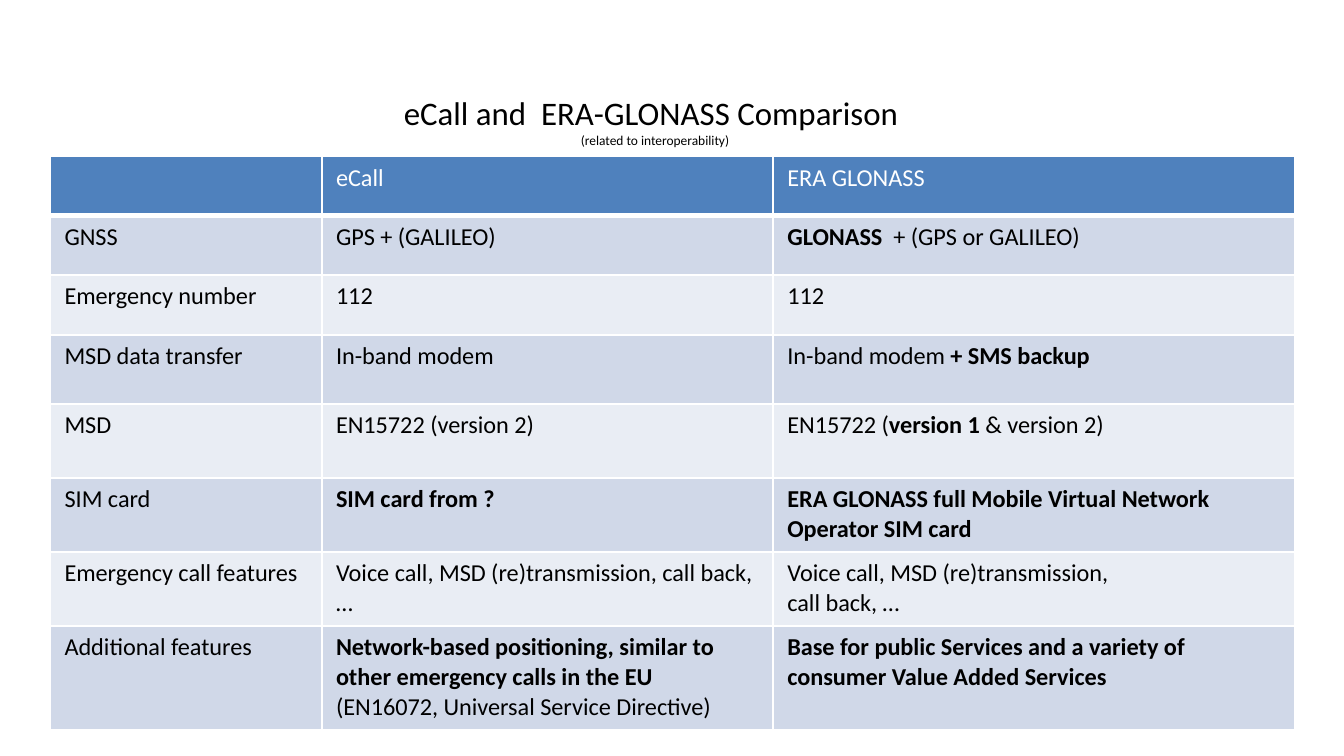
from lxml.etree import SubElement
from pptx import Presentation
from pptx.dml.color import RGBColor as RGB
from pptx.enum.text import MSO_ANCHOR as Anchor, PP_ALIGN as Align
from pptx.oxml.ns import qn
from pptx.util import Cm, Pt

FONT = "Calibri"
COLORS = {"text": "000000", "white": "FFFFFF", "header": "4F81BD",
          "odd": "D0D8E8", "even": "E9EDF4"}

TITLE = [("eCall and  ERA-GLONASS Comparison ", 17.6),
         ("(related to interoperability)", 7.2)]

# Text between ** marks is bold
ROWS = [
    ("", "eCall", "ERA GLONASS"),
    ("GNSS", "GPS + (GALILEO)", "**GLONASS**  + (GPS or GALILEO)"),
    ("Emergency number", "112", "112"),
    ("MSD data transfer", "In-band modem", "In-band modem **+ SMS backup**"),
    ("MSD", "EN15722 (version 2)", "EN15722 (**version 1** & version 2)"),
    ("SIM card", "**SIM card from ?**",
     "**ERA GLONASS full Mobile Virtual Network Operator SIM card**"),
    ("Emergency call features", "Voice call, MSD (re)transmission, call back, …",
     "Voice call, MSD (re)transmission, \ncall back, …"),
    ("Additional features",
     "**Network-based positioning, similar to other emergency calls in the EU**"
     " (EN16072, Universal Service Directive)",
     "**Base for public Services and a variety of consumer Value Added Services**"),
]
COL_WIDTHS = [5.13, 8.53, 9.86]
ROW_HEIGHTS = [1.11, 1.13, 1.13, 1.31, 1.4, 1.4, 1.4, 1.96]
LEFT = 0.95


def add_run(p, text, size, color, bold=False):
    r = p.add_run()
    r.text = text
    r.font.name = FONT
    r.font.size = Pt(size)
    r.font.bold = bold
    r.font.color.rgb = RGB.from_string(COLORS[color])


def add_borders(cell, bottom):
    tc_pr = cell._tc.get_or_add_tcPr()
    for side, width in (("L", 1), ("R", 1), ("T", 1), ("B", bottom)):
        ln = SubElement(tc_pr, qn(f"a:ln{side}"), w=str(Pt(width)))
        fill = SubElement(ln, qn("a:solidFill"))
        SubElement(fill, qn("a:srgbClr"), val=COLORS["white"])


def fill_cell(cell, text, row):
    add_borders(cell, 1 if row else 3)
    cell.fill.solid()
    name = ("even", "odd")[row % 2] if row else "header"
    cell.fill.fore_color.rgb = RGB.from_string(COLORS[name])
    cell.margin_left = cell.margin_right = Cm(0.27)
    p = cell.text_frame.paragraphs[0]
    for i, part in enumerate(text.split("**")):
        for j, line in enumerate(part.split("\n")):
            if j:
                p.add_line_break()
            if line:
                add_run(p, line, 13, "text" if row else "white", i % 2 == 1)


prs = Presentation()
prs.slide_width, prs.slide_height = Cm(25.4), Cm(14.29)
s = prs.slides.add_slide(prs.slide_layouts[6])

# Title
tf = s.shapes.add_textbox(Cm(LEFT), Cm(1.63), Cm(22.86), Cm(1.3)).text_frame
tf.word_wrap = True
tf.vertical_anchor = Anchor.TOP
p = tf.paragraphs[0]
p.alignment = Align.CENTER
for i, (text, size) in enumerate(TITLE):
    if i:
        p.add_line_break()
    add_run(p, text, size, "text")

# Comparison table
table = s.shapes.add_table(len(ROWS), len(COL_WIDTHS), Cm(LEFT), Cm(2.96),
                           Cm(sum(COL_WIDTHS)), Cm(sum(ROW_HEIGHTS))).table
for col, width in zip(table.columns, COL_WIDTHS):
    col.width = Cm(width)
for i, (height, texts) in enumerate(zip(ROW_HEIGHTS, ROWS)):
    table.rows[i].height = Cm(height)
    for j, text in enumerate(texts):
        fill_cell(table.cell(i, j), text, i)

prs.save("out.pptx")
